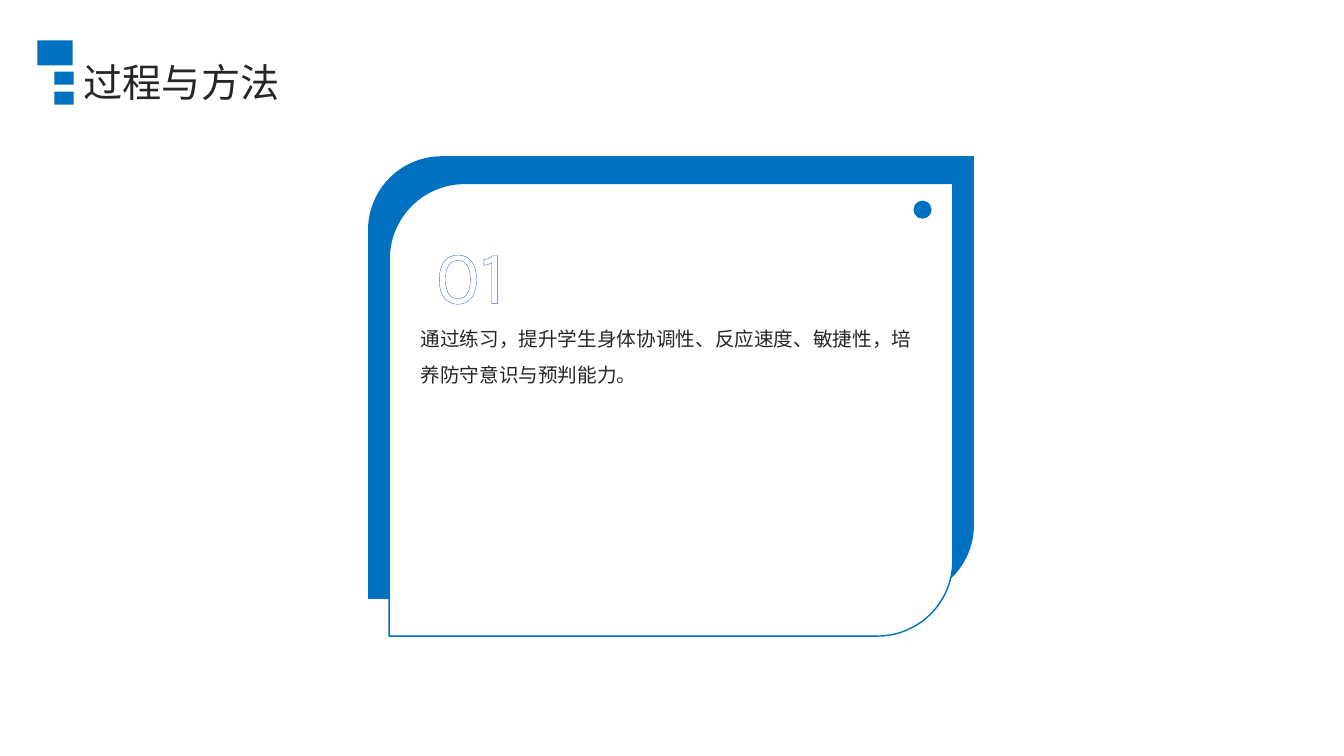
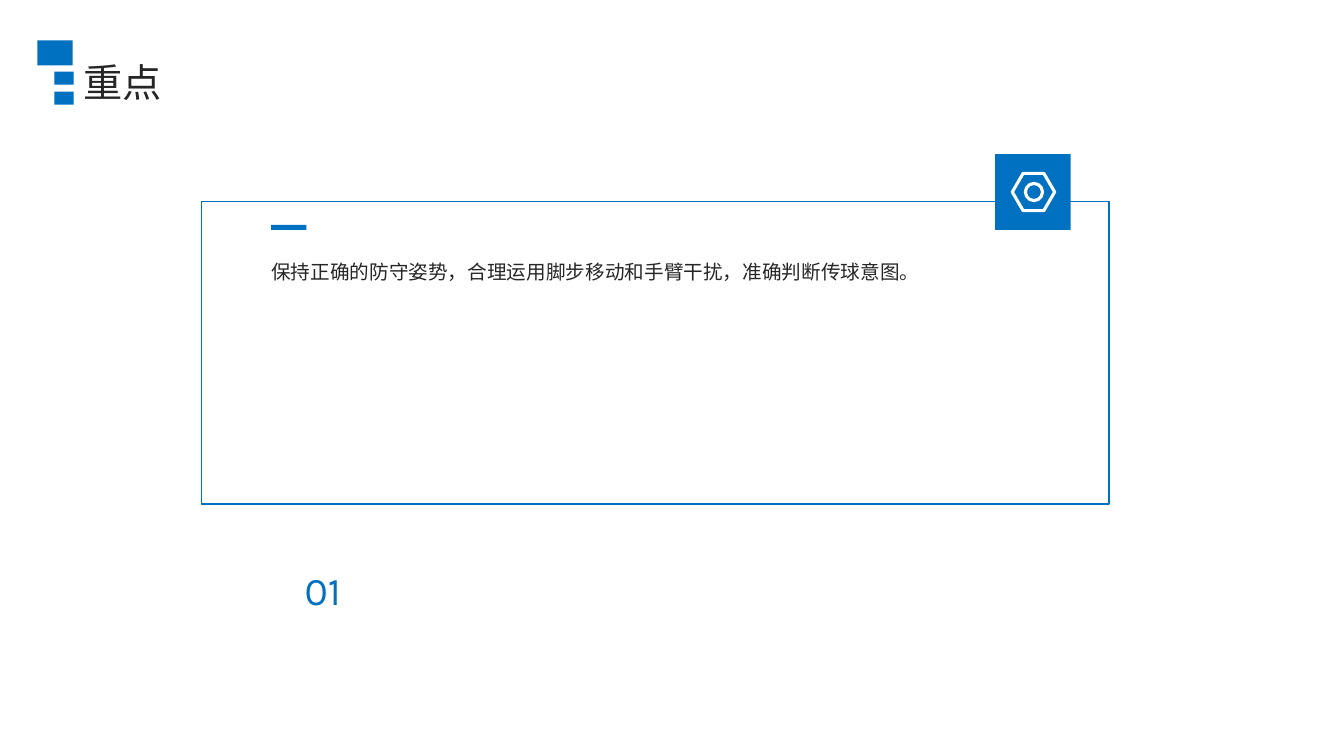
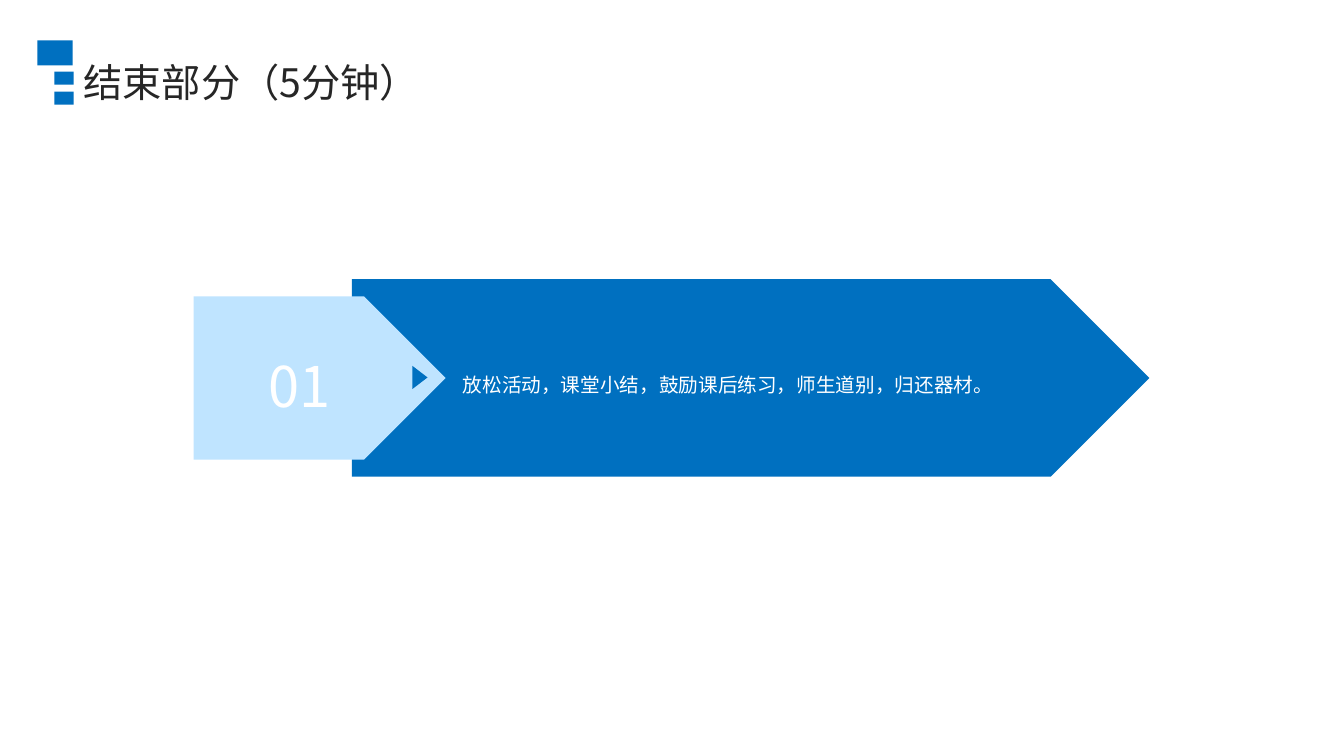
from lxml import etree
from pptx import Presentation
from pptx.dml.color import RGBColor
from pptx.enum.shapes import MSO_SHAPE
from pptx.enum.text import MSO_ANCHOR, PP_ALIGN
from pptx.oxml.ns import qn
from pptx.util import Inches, Pt

RECT, OVAL = MSO_SHAPE.RECTANGLE, MSO_SHAPE.OVAL
LEAF, PLATE = MSO_SHAPE.ROUND_2_DIAG_RECTANGLE, MSO_SHAPE.PENTAGON
HEX, WEDGE = MSO_SHAPE.HEXAGON, MSO_SHAPE.ISOSCELES_TRIANGLE
LEFT, CENTER = PP_ALIGN.LEFT, PP_ALIGN.CENTER
TOP, MIDDLE = MSO_ANCHOR.TOP, MSO_ANCHOR.MIDDLE

BLUE, PALE, WHITE, INK = "0070C0", "BFE4FF", "FFFFFF", "262626"
RIM = "3860F4"
SANS, KARLA = "Noto Sans CJK SC", "Karla"


def paint(shape, fill, line=None, width=1):
    """Give a shape a flat fill and line; None means no fill or no line."""
    shape.shadow.inherit = False
    for part, color in ((shape.fill, fill), (shape.line.fill, line)):
        if color:
            part.solid()
            part.fore_color.rgb = RGBColor.from_string(color)
        else:
            part.background()
    if line:
        shape.line.width = Pt(width)
    return shape


def write(shape, text, size, color, space=1.5, font=SANS, align=LEFT, anchor=TOP):
    """Set one paragraph in a shape without insets and return its run."""
    frame = shape.text_frame
    frame.word_wrap = True
    frame.vertical_anchor = anchor
    frame.margin_left = frame.margin_right = 0
    frame.margin_top = frame.margin_bottom = 0
    para = frame.paragraphs[0]
    para.alignment, para.line_spacing = align, space
    run = para.add_run()
    run.text = text
    run.font.size, run.font.name = Pt(size), font
    run.font.color.rgb = RGBColor.from_string(color)
    etree.SubElement(run.font._element, qn("a:ea"), typeface=font)
    return run


deck = Presentation()
deck.slide_width, deck.slide_height = Inches(13.33), Inches(7.5)

# Shared title and block mark
pages = []
for title in ("过程与方法", "重点", "结束部分（5分钟）"):
    shapes = deck.slides.add_slide(deck.slide_layouts[6]).shapes
    pages.append(shapes)
    box = shapes.add_textbox(*map(Inches, (0.83, 0.53, 11.88, 0.51)))
    write(box, title, 28, INK, 1.1, anchor=MIDDLE)
    for at in ((0.37, 0.4, 0.35, 0.25), (0.54, 0.71, 0.19, 0.13), (0.54, 0.91, 0.19, 0.13)):
        paint(shapes.add_shape(RECT, *map(Inches, at)), BLUE)
method, focus, ending = pages

# Process and method: a leaf card over a blue leaf
for kind, at, fill, line in (
    (LEAF, (3.65, 1.55, 6.01, 4.39), BLUE, None),
    (LEAF, (3.86, 1.82, 5.59, 4.49), WHITE, BLUE),
    (OVAL, (9.06, 1.99, 0.18, 0.18), BLUE, None),
):
    paint(method.add_shape(kind, *map(Inches, at)), fill, line)
box = method.add_textbox(*map(Inches, (3.99, 1.99, 1.35, 1)))
run = write(box, "01", 54, WHITE, 1.3, KARLA, CENTER)
rim = etree.Element(qn("a:ln"), w=str(Pt(1.25)))
solid = etree.SubElement(rim, qn("a:solidFill"))
etree.SubElement(solid, qn("a:srgbClr"), val=RIM)
run.font._element.insert(0, rim)
box = method.add_textbox(*map(Inches, (4.17, 3.13, 4.98, 3)))
write(box, "通过练习，提升学生身体协调性、反应速度、敏捷性，培养防守意识与预判能力。", 14, INK)

# Key point: a callout with a nut icon
pen = focus.build_freeform(2.45, 1.9, scale=Inches(1))
pen.add_line_segments(
    [(10.87, 1.9), (10.87, 5.23), (3.35, 5.23), (3.2, 5.48), (3.05, 5.23), (2.45, 5.23)]
)
paint(pen.convert_to_shape(), WHITE, BLUE)
for at in ((9.87, 1.53, 0.75, 0.75), (2.69, 2.23, 0.35, 0.05)):
    paint(focus.add_shape(RECT, *map(Inches, at)), BLUE)
nut = focus.add_shape(HEX, *map(Inches, (10.04, 1.72, 0.42, 0.37)))
nut.adjustments[0] = 0.29
hole = focus.add_shape(OVAL, *map(Inches, (10.17, 1.82, 0.17, 0.17)))
for part in (nut, hole):
    paint(part, None, WHITE, 2.25)
box = focus.add_textbox(*map(Inches, (2.69, 2.46, 7.94, 2.24)))
write(box, "保持正确的防守姿势，合理运用脚步移动和手臂干扰，准确判断传球意图。", 14, INK)
box = focus.add_textbox(*map(Inches, (2.84, 5.48, 0.72, 0.58)))
write(box, "01", 28, BLUE, 1.3, KARLA, CENTER)

# Ending: a numbered arrow over a long arrow
paint(ending.add_shape(PLATE, *map(Inches, (3.49, 2.77, 7.91, 1.96))), BLUE)
plate = paint(ending.add_shape(PLATE, *map(Inches, (1.92, 2.94, 2.5, 1.62))), PALE)
write(plate, "01", 40, WHITE, 1.2, align=CENTER, anchor=MIDDLE)
box = ending.add_textbox(*map(Inches, (4.59, 2.86, 6.1, 1.79)))
write(box, "放松活动，课堂小结，鼓励课后练习，师生道别，归还器材。", 14, WHITE, anchor=MIDDLE)
wedge = paint(ending.add_shape(WEDGE, *map(Inches, (4.05, 3.67, 0.23, 0.15))), BLUE)
wedge.rotation = 90

deck.save("out.pptx")
